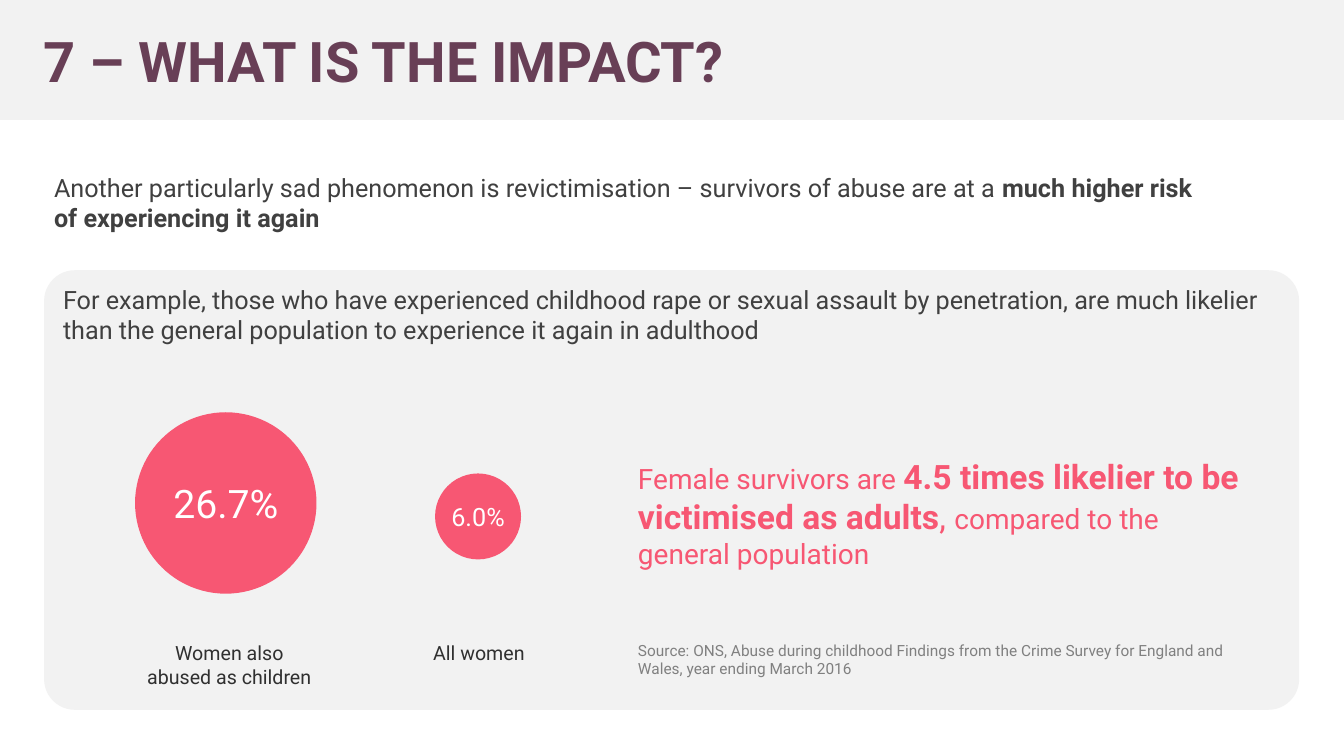
from pptx import Presentation
from pptx.dml.color import RGBColor as RGB
from pptx.enum.shapes import MSO_SHAPE as Shape
from pptx.enum.text import MSO_ANCHOR as Anchor, PP_ALIGN as Align
from pptx.util import Pt

FONT = "Roboto"
PINK, PLUM, PALE, WHITE = "F75773", "683F56", "F2F2F2", "FFFFFF"
DARK, INK, GREY = "404040", "303030", "808080"


def color(code):
    return RGB.from_string(code)


def write(frame, *runs, size=18, ink=DARK, bold=False, align=Align.LEFT,
          anchor=Anchor.TOP, left=7.2, right=7.2, after=0):
    """Each run is a string, or a tuple of string, size and bold."""
    frame.word_wrap = True
    frame.vertical_anchor = anchor
    frame.margin_left, frame.margin_right = Pt(left), Pt(right)
    frame.margin_top = frame.margin_bottom = Pt(3.6)
    para = frame.paragraphs[0]
    para.alignment = align
    para.space_after = Pt(after)
    for item in runs:
        text, pts, heavy = (item, size, bold) if isinstance(item, str) else item
        run = para.add_run()
        run.text = text
        font = run.font
        font.name, font.size, font.bold = FONT, Pt(pts), heavy
        font.color.rgb = color(ink)


def block(slide, kind, box, fill):
    shape = slide.shapes.add_shape(kind, *map(Pt, box))
    shape.shadow.inherit = False
    shape.fill.solid()
    shape.fill.fore_color.rgb = color(fill)
    shape.line.fill.background()
    return shape


def label(slide, box, *runs, **form):
    write(slide.shapes.add_textbox(*map(Pt, box)).text_frame, *runs, **form)


def bubble(slide, x, y, width, text, **form):
    shape = block(slide, Shape.OVAL, (x, y, width, width), PINK)
    write(shape.text_frame, text, ink=WHITE, align=Align.CENTER,
          anchor=Anchor.MIDDLE, **form)


def main():
    deck = Presentation()
    deck.slide_width, deck.slide_height = Pt(960), Pt(540)
    slide = deck.slides.add_slide(deck.slide_layouts[6])

    # Panel with the example
    panel = block(slide, Shape.ROUNDED_RECTANGLE, (31.5, 193, 896.5, 314), PALE)
    panel.adjustments[0] = 0.07
    write(panel.text_frame,
          "For example, those who have experienced childhood rape or sexual "
          "assault by penetration, are much likelier than the general "
          "population to experience it again in adulthood")

    # Title band
    band = block(slide, Shape.RECTANGLE, (0, 0, 960, 85.7), PALE)
    write(band.text_frame, "7 – WHAT IS THE IMPACT?", size=40, ink=PLUM,
          bold=True, anchor=Anchor.MIDDLE, left=31)

    # Opening statement
    label(slide, (31.5, 119.5, 830, 73),
          "Another particularly sad phenomenon is revictimisation – "
          "survivors of abuse are at a ",
          ("much higher risk of experiencing it again", 18, True))

    # Bubbles and their captions
    bubble(slide, 96.5, 294.5, 129.6, "26.7%", size=28)
    bubble(slide, 310.8, 338.2, 61.4, "6.0%", left=0, right=0)
    base = 454.3
    for x, text in ((97.2, "Women also abused as children"),
                    (275.5, "All women")):
        label(slide, (x, base, 133.2, 41), text, size=14, ink=INK,
              align=Align.CENTER)

    # Key finding and source
    side = 448.6
    label(slide, (side, 321.8, 445, 90), "Female survivors are ",
          ("4.5 times likelier to be victimised as adults", 24, True),
          (", ", 24, False), "compared to the general population",
          size=20, ink=PINK)
    label(slide, (side, base, 461.5, 34),
          "Source: ONS, Abuse during childhood Findings from the Crime Survey "
          "for England and Wales, year ending March 2016",
          size=11, ink=GREY, after=6)

    deck.save("out.pptx")


if __name__ == "__main__":
    main()
